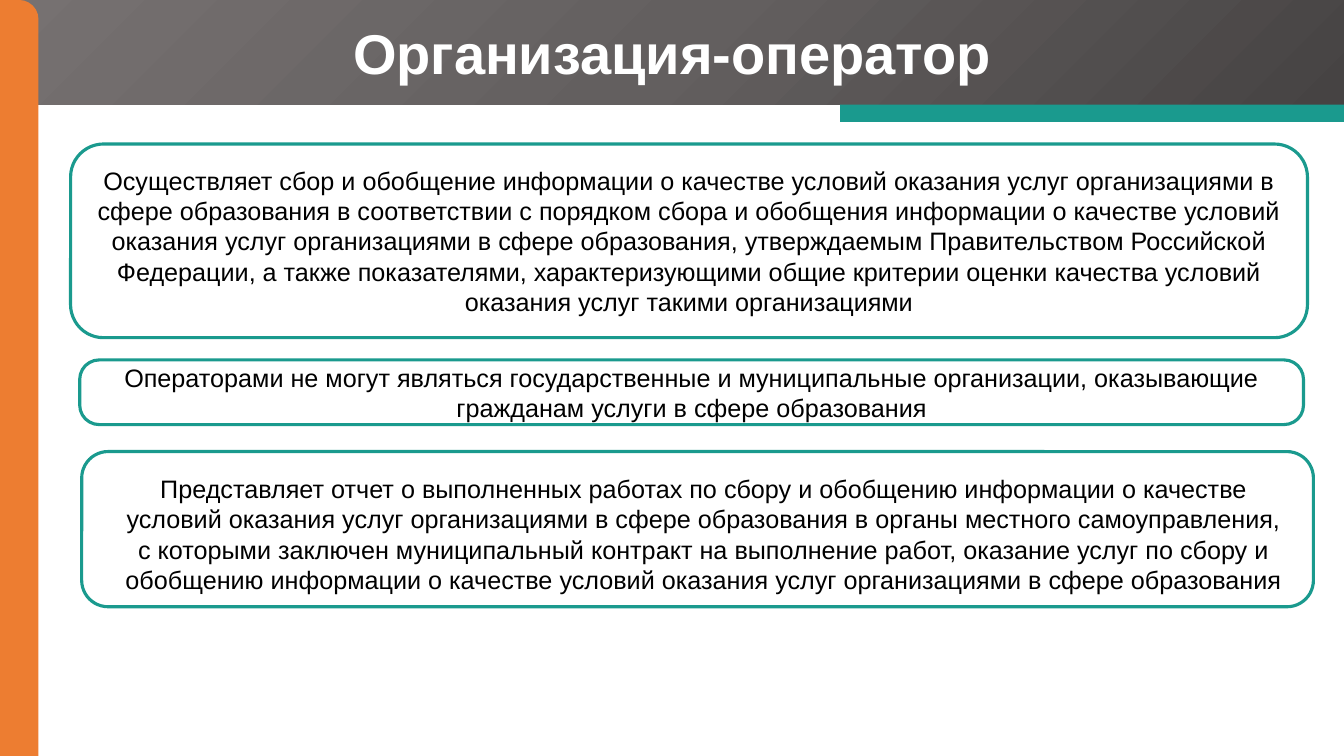
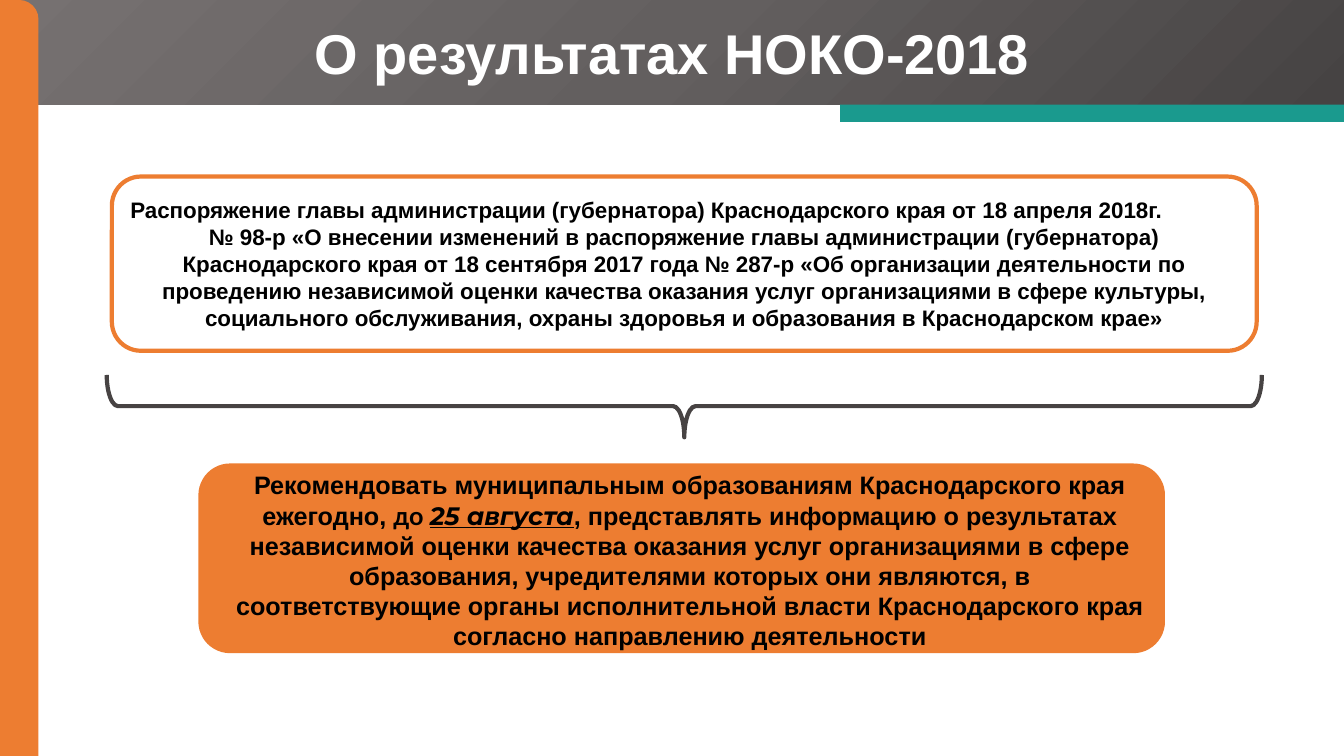
from copy import deepcopy

from pptx import Presentation
from pptx.dml.color import RGBColor
from pptx.enum.shapes import MSO_SHAPE
from pptx.enum.text import MSO_ANCHOR, PP_ALIGN
from pptx.oxml.ns import qn
from pptx.util import Cm, Pt

RECT, ROUNDED = MSO_SHAPE.RECTANGLE, MSO_SHAPE.ROUNDED_RECTANGLE
ONE_ROUND, BRACE = MSO_SHAPE.ROUND_1_RECTANGLE, MSO_SHAPE.RIGHT_BRACE
LEFT, CENTER = PP_ALIGN.LEFT, PP_ALIGN.CENTER
MIDDLE = MSO_ANCHOR.MIDDLE

WHITE = RGBColor(0xFF, 0xFF, 0xFF)
BLACK = RGBColor(0, 0, 0)
ORANGE = RGBColor(0xED, 0x7D, 0x31)
TEAL = RGBColor(0x1A, 0x9A, 0x8E)
GRAY = RGBColor(0x47, 0x43, 0x43)
BAND_STOPS = [
    (0, RGBColor(0x46, 0x43, 0x43)),
    (0.5, RGBColor(0x63, 0x5F, 0x5F)),
    (1, RGBColor(0x76, 0x71, 0x71)),
]

FONT = "Arial"
LINE_HEIGHT = 1.2
SLIDE_W, SLIDE_H = 33.87, 19.05
BAND_H, SIDEBAR_W = 2.64, 0.97
ACCENT_W, ACCENT_H = 12.7, 0.43
MARGINS = (0.25, 0, 0.25, 0)

OPERATOR_TITLE = "Организация-оператор"
OPERATOR_BOXES = [
    dict(
        at=(1.78, 3.63, 31.17, 4.88),
        text="Осуществляет сбор и обобщение информации о качестве условий "
             "оказания услуг организациями в сфере образования в соответствии "
             "с порядком сбора и обобщения информации о качестве условий "
             "оказания услуг организациями в сфере образования, утверждаемым "
             "Правительством Российской Федерации, а также показателями, "
             "характеризующими общие критерии оценки качества условий "
             "оказания услуг такими организациями",
    ),
    dict(
        at=(2.01, 9.07, 30.84, 1.63),
        corner=0.3,
        text="Операторами не могут являться государственные и муниципальные "
             "организации, оказывающие гражданам услуги в сфере образования",
    ),
    dict(
        at=(2.06, 11.38, 31.04, 3.91),
        margins=(0.84, 0.24, 0.53, 0),
        text="Представляет отчет о выполненных работах по сбору и обобщению "
             "информации о качестве условий оказания услуг организациями в "
             "сфере образования в органы местного самоуправления, с которыми "
             "заключен муниципальный контракт на выполнение работ, оказание "
             "услуг по сбору и обобщению информации о качестве условий "
             "оказания услуг организациями в сфере образования",
    ),
]

RESULTS_TITLE = "О результатах НОКО-2018"
ORDER_AT = (2.82, 4.45, 28.85, 4.39)
ORDER = [
    (LEFT, ["Распоряжение главы администрации (губернатора) "
            "Краснодарского края от 18 апреля 2018г."]),
    (CENTER, ["№ 98-р «О внесении изменений в распоряжение главы "
              "администрации (губернатора) Краснодарского края от 18 сентября "
              "2017 года № 287-р «Об организации деятельности по проведению "
              "независимой оценки качества оказания услуг организациями в "
              "сфере культуры, социального обслуживания, охраны здоровья и "
              "образования в Краснодарском крае»"]),
]
BRACE_AT = (16.46, -4.32, 1.57, 29.11)
ADVICE_AT = (5, 11.68, 24.36, 4.78)
ADVICE_MARGINS = (0.66, 0.1, 0.25, 0)
ADVICE = [
    (CENTER, [
        "Рекомендовать муниципальным образованиям Краснодарского края "
        "ежегодно, ",
        ("до ", dict(name="Lato")),
        ("25 августа", dict(name="Montserrat", italic=True, underline=True)),
        ", представлять информацию о результатах независимой оценки качества "
        "оказания услуг организациями в сфере образования, учредителями "
        "которых они являются, в соответствующие органы исполнительной власти "
        "Краснодарского края согласно направлению деятельности",
    ]),
]


def set_font(font, size, color, bold):
    font.name = FONT
    font.size = Pt(size)
    font.color.rgb = color
    font.bold = bold


def add_shape(s, kind, at, fill=None, line=None, weight=0):
    sp = s.shapes.add_shape(kind, *map(Cm, at))
    sp.shadow.inherit = False
    if fill is None:
        sp.fill.background()
    else:
        sp.fill.solid()
        sp.fill.fore_color.rgb = fill
    if line is None:
        sp.line.fill.background()
    else:
        sp.line.color.rgb = line
        sp.line.width = Pt(weight)
    return sp


def set_margins(tf, margins):
    tf.margin_left, tf.margin_top, tf.margin_right, tf.margin_bottom = map(Cm, margins)


def write(sp, paragraphs, size, bold=False, margins=MARGINS):
    tf = sp.text_frame
    tf.word_wrap = True
    tf.vertical_anchor = MIDDLE
    set_margins(tf, margins)
    for i, (align, runs) in enumerate(paragraphs):
        p = tf.add_paragraph() if i else tf.paragraphs[0]
        p.alignment = align
        p.line_spacing = Pt(size * LINE_HEIGHT)
        set_font(p.font, size, BLACK, bold)
        for run in runs:
            text, style = (run, {}) if isinstance(run, str) else run
            r = p.add_run()
            r.text = text
            set_font(r.font, size, BLACK, bold)
            for key, value in style.items():
                setattr(r.font, key, value)


def fill_band(sp):
    sp.fill.gradient()
    sp.fill.gradient_angle = 135
    stops = sp._element.spPr.find(".//" + qn("a:gsLst"))
    stops.insert(1, deepcopy(stops[0]))
    for stop, (position, color) in zip(sp.fill.gradient_stops, BAND_STOPS):
        stop.position = position
        stop.color.rgb = color


def add_slide(prs, title):
    s = prs.slides.add_slide(prs.slide_layouts[5])
    sp = s.shapes.title
    sp.left, sp.top, sp.width, sp.height = map(Cm, (0, 0, SLIDE_W, BAND_H))
    fill_band(sp)
    tf = sp.text_frame
    tf.text = title
    tf.vertical_anchor = MIDDLE
    p = tf.paragraphs[0]
    p.alignment = CENTER
    set_font(p.font, 40, WHITE, True)
    sidebar = add_shape(s, ONE_ROUND, (0, 0, SIDEBAR_W, SLIDE_H), ORANGE)
    sidebar.adjustments[0] = 0.5
    add_shape(s, RECT, (SLIDE_W - ACCENT_W, BAND_H, ACCENT_W, ACCENT_H), TEAL)
    return s


def build_operator(prs):
    s = add_slide(prs, OPERATOR_TITLE)
    for box in OPERATOR_BOXES:
        sp = add_shape(s, ROUNDED, box["at"], WHITE, TEAL, 2.25)
        sp.adjustments[0] = box.get("corner", 0.17)
        write(sp, [(CENTER, [box["text"]])], 18, margins=box.get("margins", MARGINS))


def build_results(prs):
    s = add_slide(prs, RESULTS_TITLE)
    order = add_shape(s, ROUNDED, ORDER_AT, line=ORANGE, weight=3)
    write(order, ORDER, 16, bold=True)
    brace = add_shape(s, BRACE, BRACE_AT, line=GRAY, weight=3)
    brace.rotation = 90
    brace.adjustments[0] = 0.18
    advice = add_shape(s, ROUNDED, ADVICE_AT, ORANGE)
    write(advice, ADVICE, 18, bold=True, margins=ADVICE_MARGINS)


def main():
    prs = Presentation()
    prs.slide_width, prs.slide_height = Cm(SLIDE_W), Cm(SLIDE_H)
    build_operator(prs)
    build_results(prs)
    prs.save("out.pptx")


if __name__ == "__main__":
    main()
